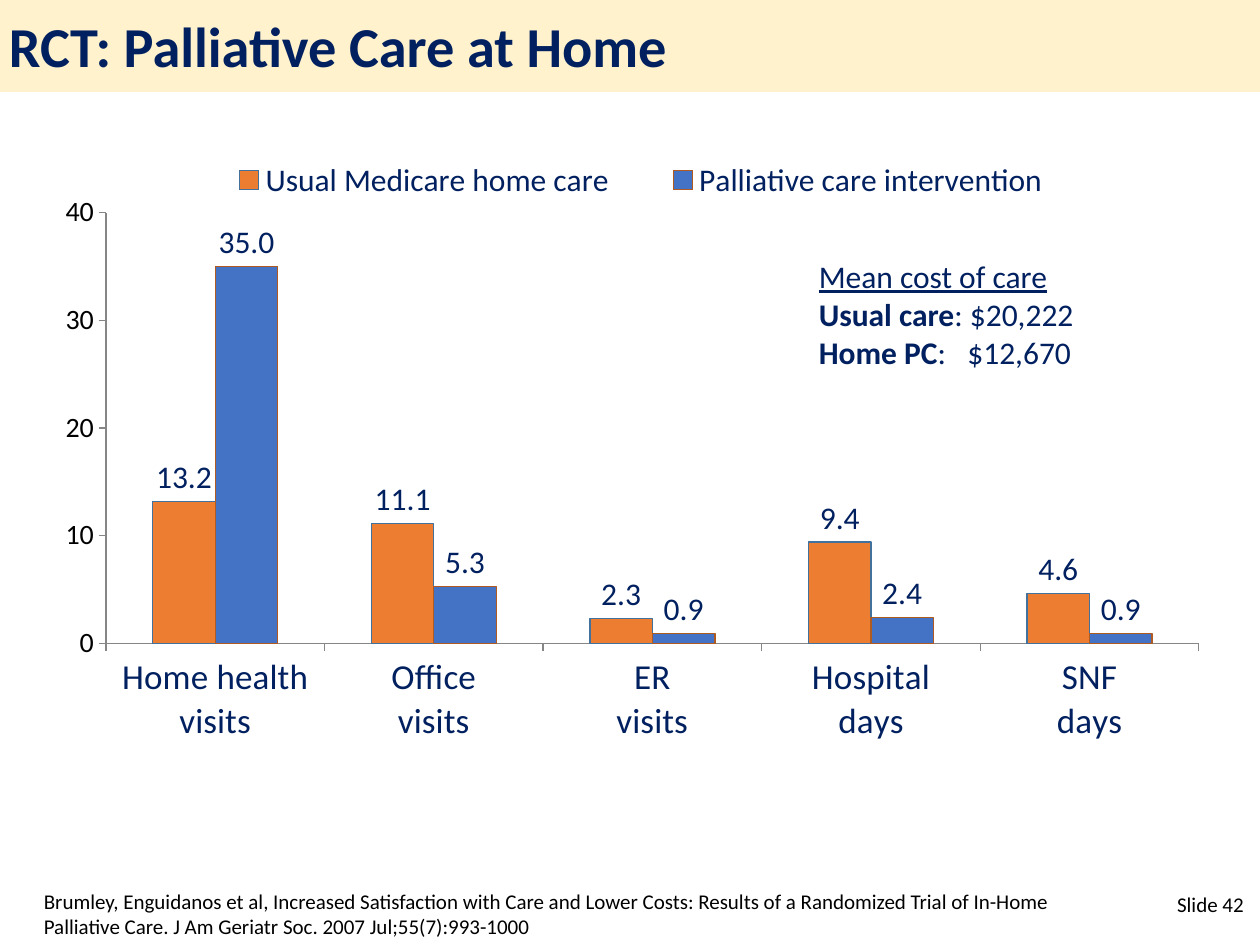
from lxml import etree
from pptx import Presentation
from pptx.chart.data import CategoryChartData
from pptx.dml.color import RGBColor
from pptx.enum.chart import XL_CHART_TYPE as ChartType, XL_LABEL_POSITION as LabelPosition
from pptx.enum.chart import XL_LEGEND_POSITION as LegendPosition, XL_TICK_MARK as TickMark
from pptx.enum.shapes import MSO_SHAPE as ShapeType
from pptx.enum.text import MSO_ANCHOR as Anchor, PP_ALIGN as Align
from pptx.oxml import parse_xml
from pptx.oxml.ns import nsdecls, qn
from pptx.util import Inches, Pt

COLORS = {
    "navy": "002060", "black": "000000", "cream": "FFF2CC", "gray": "868686",
    "orange": "ED7D31", "blue": "4472C4", "dark orange": "AE5A21", "dark blue": "41719C",
}


def style(font, size, color, bold=None):
    font.name, font.size, font.bold = "Calibri", Pt(size), bold
    font.color.rgb = RGBColor.from_string(COLORS[color])


def set_layout(parent, before, x, y, width, height, inner=False):
    """Place a chart part by shares of the chart's size."""
    for old in parent.findall(qn("c:layout")):
        parent.remove(old)
    target = '<c:layoutTarget val="inner"/>' if inner else ""
    sizes = "".join(f'<c:{tag} val="{share}"/>' for tag, share in
                    (("x", x), ("y", y), ("w", width), ("h", height)))
    layout = parse_xml(
        f'<c:layout {nsdecls("c")}><c:manualLayout>{target}<c:xMode val="edge"/>'
        f'<c:yMode val="edge"/>{sizes}</c:manualLayout></c:layout>')
    before.addprevious(layout)


presentation = Presentation()
presentation.slide_width, presentation.slide_height = Inches(10), Inches(7.5)
slide = presentation.slides.add_slide(presentation.slide_layouts[6])

# Title band
band = slide.shapes.add_shape(ShapeType.RECTANGLE, 0, Inches(-0.02), Inches(10), Inches(0.75))
band.shadow.inherit = False
band.fill.solid()
band.fill.fore_color.rgb = RGBColor.from_string(COLORS["cream"])
band.line.fill.background()
frame = band.text_frame
frame.vertical_anchor = Anchor.MIDDLE
frame.margin_left = frame.margin_right = Inches(0.07)
frame.margin_top = frame.margin_bottom = Inches(0.04)
title = frame.paragraphs[0]
title.text = "RCT: Palliative Care at Home"
title.alignment = Align.LEFT
style(title.font, 32.2, "navy", True)

# Chart of service use
series_rows = [
    ("Usual Medicare home care", (13.2, 11.1, 2.3, 9.4, 4.6), "orange", "dark blue"),
    ("Palliative care intervention", (35.0, 5.3, 0.9, 2.4, 0.9), "blue", "dark orange"),
]
data = CategoryChartData(number_format="0.0")
data.categories = ["Home health\nvisits", "Office\nvisits", "ER\nvisits",
                   "Hospital\ndays", "SNF\ndays"]
for name, values, fill, outline in series_rows:
    data.add_series(name, values)
chart = slide.shapes.add_chart(ChartType.COLUMN_CLUSTERED, Inches(0.48), Inches(1.17),
                               Inches(9.04), Inches(5.18), data).chart
chart.has_title = False
style(chart.font, 18, "black")
plot = chart.plots[0]
plot.gap_width, plot.overlap, plot.vary_by_categories = 150, 0, False

for series, (name, values, fill, outline) in zip(plot.series, series_rows):
    series.format.fill.solid()
    series.format.fill.fore_color.rgb = RGBColor.from_string(COLORS[fill])
    series.format.line.color.rgb = RGBColor.from_string(COLORS[outline])
    series.format.line.width = Pt(0.75)
    labels = series.data_labels
    labels.show_value = True
    labels.number_format, labels.number_format_is_linked = "0.0", False
    labels.position = LabelPosition.OUTSIDE_END
    style(labels.font, 18, "navy")

for axis, size, color in ((chart.category_axis, 20, "navy"), (chart.value_axis, 16, "black")):
    axis.has_major_gridlines = False
    axis.major_tick_mark, axis.minor_tick_mark = TickMark.OUTSIDE, TickMark.NONE
    axis.format.line.color.rgb = RGBColor.from_string(COLORS["gray"])
    axis.format.line.width = Pt(0.75)
    style(axis.tick_labels.font, size, color)
value_axis = chart.value_axis
value_axis.minimum_scale, value_axis.maximum_scale, value_axis.major_unit = 0, 40, 10
value_axis.tick_labels.number_format = "0"
value_axis.tick_labels.number_format_is_linked = False

chart.has_legend = True
legend = chart.legend
legend.position, legend.include_in_layout = LegendPosition.RIGHT, False
style(legend.font, 18, "navy")
legend_xml = legend._element
set_layout(legend_xml, legend_xml.find(qn("c:overlay")), 0.11, 0.01, 0.8, 0.08)
plot_area = chart._chartSpace.chart.plotArea
set_layout(plot_area, plot_area.find(qn("c:barChart")), 0.04, 0.1, 0.96, 0.66, inner=True)

# Text boxes: place, size, colour, alignment, lines of (text, look) runs
citation = ("Brumley, Enguidanos et al, Increased Satisfaction with Care and Lower Costs: "
            "Results of a Randomized Trial of In-Home Palliative Care. "
            "J Am Geriatr Soc. 2007 Jul;55(7):993-1000")
text_boxes = [
    ((0.25, 7, 8.54, 0.5), 12, "black", Align.LEFT, [[(citation, "")]]),
    ((6.4, 1.99, 3.03, 1.01), 18, "navy", Align.LEFT, [
        [("Mean cost of care", "underline")],
        [("Usual care", "bold"), (": $20,222", "")],
        [("Home PC", "bold"), (":\t$12,670", "")],
    ]),
    ((7.72, 7.03, 2.25, 0.4), 12, "black", Align.RIGHT, [[("Slide 42", "")]]),
]
for place, size, color, alignment, lines in text_boxes:
    frame = slide.shapes.add_textbox(*map(Inches, place)).text_frame
    frame.word_wrap = True
    for index, runs in enumerate(lines):
        paragraph = frame.paragraphs[0] if index == 0 else frame.add_paragraph()
        paragraph.alignment = alignment
        style(paragraph.font, size, color)
        for text, look in runs:
            run = paragraph.add_run()
            run.text = text
            if look:
                setattr(run.font, look, True)
            if "\t" in text:
                properties = paragraph._p.get_or_add_pPr()
                tabs = etree.Element(qn("a:tabLst"))
                etree.SubElement(tabs, qn("a:tab"), pos=str(Inches(1.18)), algn="l")
                properties.insert(0, tabs)

presentation.save("out.pptx")
